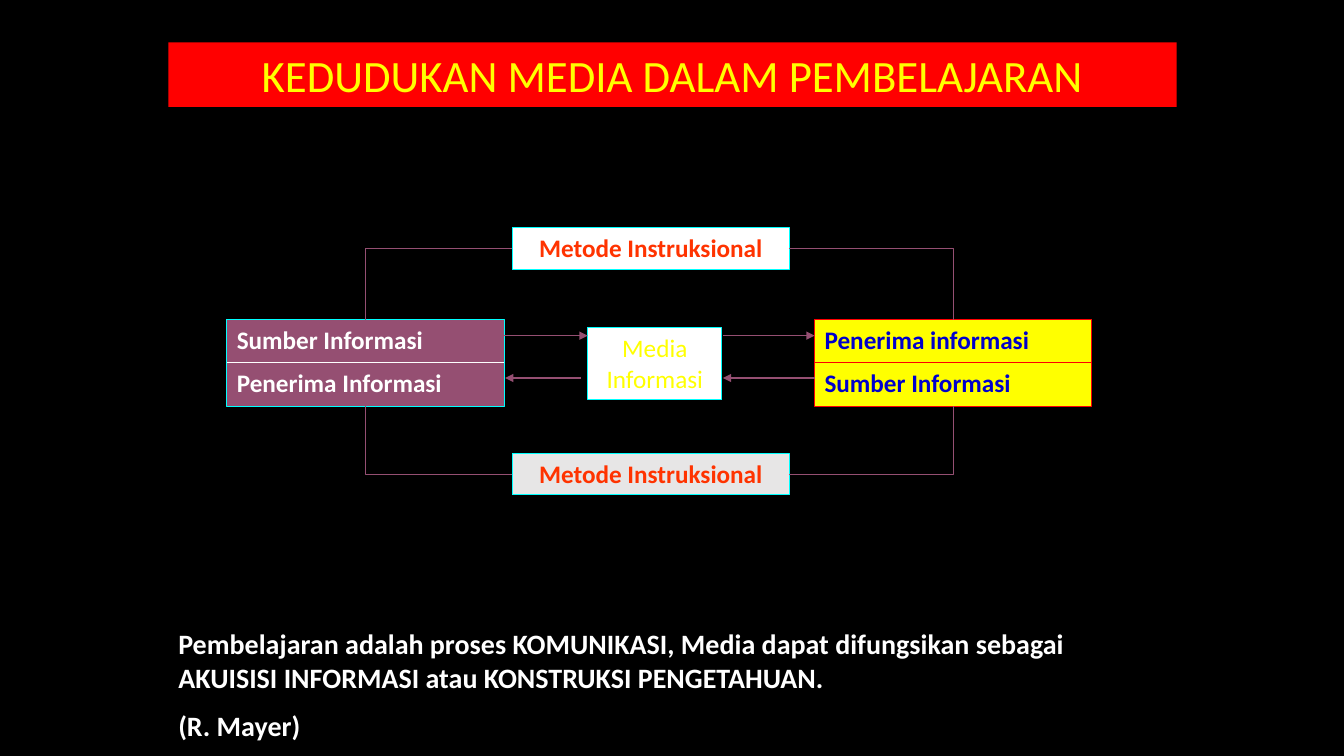
from lxml.etree import SubElement
from pptx import Presentation
from pptx.dml.color import RGBColor
from pptx.enum.shapes import MSO_CONNECTOR, MSO_SHAPE
from pptx.enum.text import MSO_ANCHOR, MSO_AUTO_SIZE, PP_ALIGN
from pptx.oxml.ns import qn
from pptx.util import Inches, Pt

HUES = {
    "black": "000000", "white": "FFFFFF", "gray": "E7E6E6", "red": "FF0000",
    "yellow": "FFFF00", "cyan": "00FFFF", "plum": "954F72", "blue": "0000CC",
    "orange": "FF3300",
}


class Deck:
    """Hold the style and the current slide, and draw its elements."""

    def __init__(self):
        self.prs = Presentation()
        self.prs.slide_width = Inches(13.33)
        self.prs.slide_height = Inches(7.5)
        self.font = "Calibri"
        self.slide = self.prs.slides.add_slide(self.prs.slide_layouts[5])
        self.paint(self.slide.background.fill, "black")

    def paint(self, fill, hue):
        fill.solid()
        fill.fore_color.rgb = RGBColor.from_string(HUES[hue])

    def label(self, shape, text, hue, size, bold, align):
        frame = shape.text_frame
        frame.text = text
        frame.word_wrap = True
        frame.auto_size = MSO_AUTO_SIZE.NONE
        frame.vertical_anchor = MSO_ANCHOR.TOP
        for i, para in enumerate(frame.paragraphs):
            para.alignment = align
            para.space_before = Pt(size / 2 if i else 0)
            for run in para.runs:
                run.font.name = self.font
                run.font.size = Pt(size)
                run.font.bold = bold
                run.font.color.rgb = RGBColor.from_string(HUES[hue])

    def title(self, text, area, fill, hue):
        shape = self.slide.shapes.title
        shape.left, shape.top, shape.width, shape.height = map(Inches, area)
        self.paint(shape.fill, fill)
        self.label(shape, text, hue, 32, False, PP_ALIGN.CENTER)

    def box(self, text, area, fill, edge, hue, size=18, bold=True, align=PP_ALIGN.LEFT):
        shape = self.slide.shapes.add_shape(MSO_SHAPE.RECTANGLE, *map(Inches, area))
        shape.shadow.inherit = False
        self.paint(shape.fill, fill)
        if edge:
            self.paint(shape.line.fill, edge)
            shape.line.width = Pt(0.75)
        else:
            shape.line.fill.background()
        self.label(shape, text, hue, size, bold, align)
        return shape

    def line(self, hue, start=(0, 0), end=(0, 0), kind=MSO_CONNECTOR.STRAIGHT):
        link = self.slide.shapes.add_connector(kind, *map(Inches, (*start, *end)))
        self.paint(link.line.fill, hue)
        link.line.width = Pt(0.75)
        SubElement(link._element.spPr, qn("a:effectLst"))
        return link

    def split(self, box, hue):
        link = self.line(hue)
        link.begin_connect(box, 1)
        link.end_connect(box, 3)

    def bend(self, start, side, end, foot):
        link = self.line("plum", kind=MSO_CONNECTOR.ELBOW)
        link.begin_connect(start, side)
        link.end_connect(end, foot)
        link._element.spPr.find(qn("a:prstGeom")).set("prst", "bentConnector2")

    def arrow(self, x1, x2, y):
        link = self.line("plum", (x1, y), (x2, y))
        SubElement(link.line._get_or_add_ln(), qn("a:tailEnd"), type="triangle")


def main():
    deck = Deck()
    deck.title("KEDUDUKAN MEDIA DALAM PEMBELAJARAN", (1.67, 0.42, 10, 0.64), "red", "yellow")

    left = deck.box("Sumber Informasi\nPenerima Informasi",
                    (2.25, 3.17, 2.75, 0.86), "plum", "cyan", "white")
    deck.box("Media Informasi", (5.83, 3.25, 1.33, 0.71), "white", "cyan",
             "yellow", bold=False, align=PP_ALIGN.CENTER)
    right = deck.box("Penerima informasi\nSumber Informasi",
                     (8.08, 3.17, 2.75, 0.86), "yellow", "red", "blue")
    deck.split(left, "white")
    deck.split(right, "red")

    for top, fill, foot in ((4.5, "gray", 2), (2.26, "white", 0)):
        way = deck.box("Metode Instruksional", (5.08, top, 2.75, 0.41), fill,
                       "cyan", "orange", align=PP_ALIGN.CENTER)
        deck.bend(way, 1, left, foot)
        deck.bend(way, 3, right, foot)

    for x1, x2, y in ((5, 5.83, 3.33), (7.17, 8.08, 3.33),
                      (8.08, 7.17, 3.75), (5.76, 5.01, 3.75)):
        deck.arrow(x1, x2, y)

    deck.box("Pembelajaran adalah proses KOMUNIKASI, Media dapat difungsikan sebagai "
             "AKUISISI INFORMASI atau KONSTRUKSI PENGETAHUAN.\n(R. Mayer)",
             (1.67, 6.17, 10, 1.28), "black", None, "white", size=20)
    deck.prs.save("out.pptx")


if __name__ == "__main__":
    main()
